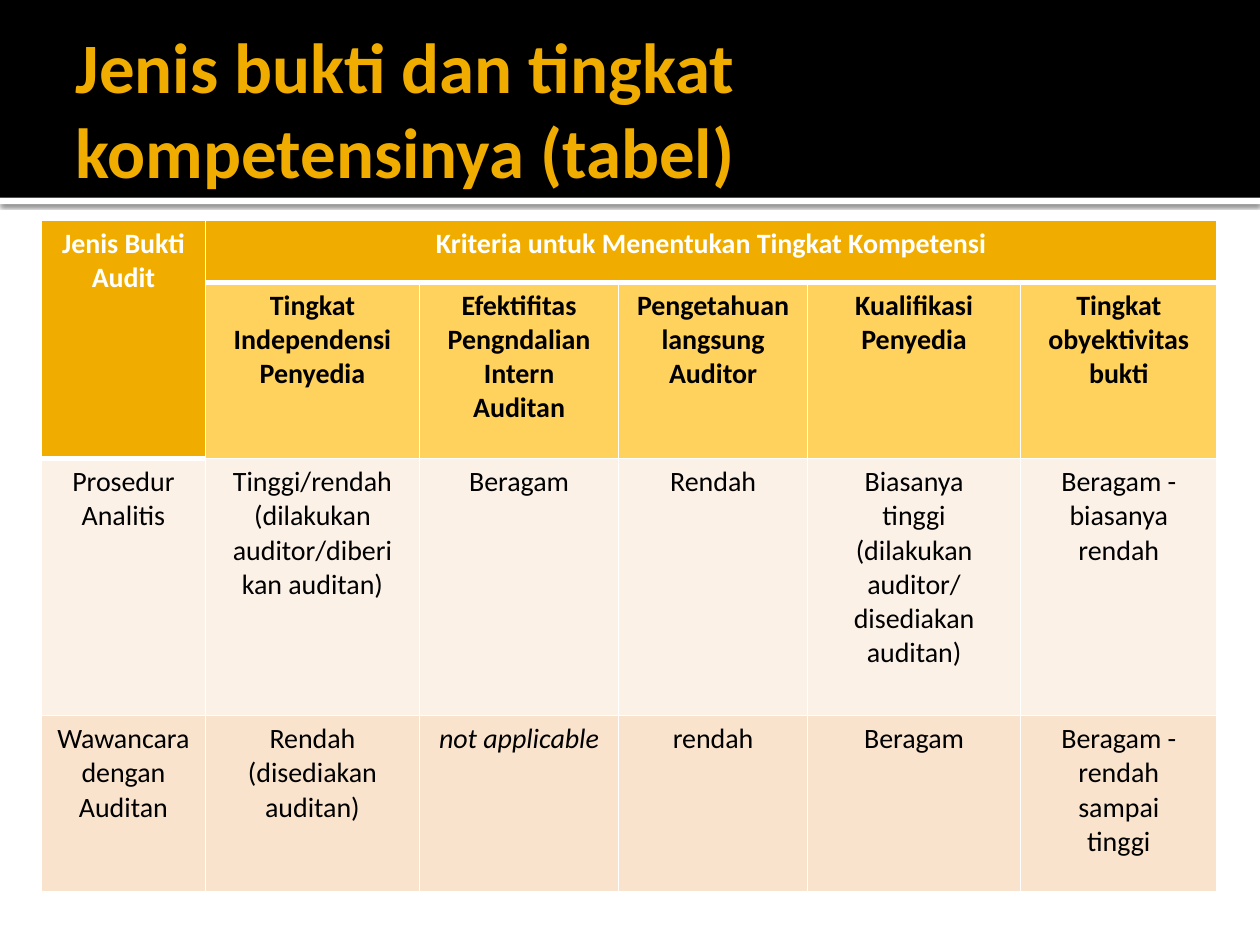
from dataclasses import dataclass

from lxml.etree import SubElement
from pptx import Presentation
from pptx.dml.color import RGBColor
from pptx.enum.text import MSO_ANCHOR as ANCHOR, PP_ALIGN as ALIGN
from pptx.enum.shapes import MSO_SHAPE as SHAPE
from pptx.oxml import parse_xml
from pptx.oxml.ns import nsdecls, qn
from pptx.util import Inches, Pt


@dataclass(frozen=True)
class Theme:
    font: str = "Calibri"
    title_size: float = 40.5
    cell_size: float = 16
    black: str = "000000"
    white: str = "FFFFFF"
    gold: str = "F0AD00"
    subhead: str = "FFD25D"
    bands: tuple = ("FCF1E7", "F9E3CC")


THEME = Theme()
COL_WIDTHS = (1.3, 1.7, 1.58, 1.5, 1.69, 1.56)
ROW_HEIGHTS = (0.49, 1.4, 2.04, 1.4)
NOT_APPLICABLE = "not applicable"

# Each line of a cell is a paragraph of its own.
HEADER = ["Jenis Bukti\nAudit", "Kriteria untuk Menentukan Tingkat Kompetensi"]
SUBHEADS = [
    "Tingkat\nIndependensi\nPenyedia",
    "Efektifitas\nPengndalian\nIntern\nAuditan",
    "Pengetahuan\nlangsung\nAuditor",
    "Kualifikasi\nPenyedia",
    "Tingkat\nobyektivitas\nbukti",
]
EVIDENCE = [
    ["Prosedur\nAnalitis",
     "Tinggi/rendah (dilakukan\nauditor/diberi\nkan auditan)",
     "Beragam",
     "Rendah",
     "Biasanya\ntinggi\n(dilakukan\nauditor/ disediakan auditan)",
     "Beragam -\nbiasanya\nrendah"],
    ["Wawancara\ndengan\nAuditan",
     "Rendah\n(disediakan\nauditan)",
     NOT_APPLICABLE,
     "rendah",
     "Beragam",
     "Beragam -\nrendah\nsampai\ntinggi"],
]


def rgb(value):
    return RGBColor.from_string(value)


def style_run(r, size, color, bold, italic=False):
    r.font.name = THEME.font
    r.font.size = Pt(size)
    r.font.color.rgb = rgb(color)
    r.font.bold = bold
    r.font.italic = italic


def add_bar(slide, left, top, width, height, color):
    sp = slide.shapes.add_shape(SHAPE.RECTANGLE, Inches(left), Inches(top),
                                Inches(width), Inches(height))
    sp.fill.solid()
    sp.fill.fore_color.rgb = rgb(color)
    sp.line.fill.background()
    sp.shadow.inherit = False
    return sp


def add_soft_shadow(sp):
    effects = sp._element.spPr.find(qn("a:effectLst"))
    shadow = SubElement(effects, qn("a:outerShdw"), blurRad=str(Pt(2.5)),
                        dist=str(Pt(0.8)), dir="5400000", algn="t", rotWithShape="0")
    color = SubElement(shadow, qn("a:srgbClr"), val=THEME.black)
    SubElement(color, qn("a:alpha"), val="60000")


def add_title_band(slide, left, top, width, height, text):
    """Black band with a shadowed white strip below and the title on it."""
    add_soft_shadow(add_bar(slide, left, top + height, width, 0.05, THEME.white))
    add_bar(slide, left, top, width, height, THEME.black)

    title = slide.shapes.title
    title.left, title.top = Inches(left + 0.5), Inches(top + 0.17)
    title.width, title.height = Inches(width - 1), Inches(height - 0.2)
    slide.shapes._spTree.append(title._element)  # in front of the band
    tf = title.text_frame
    tf.word_wrap = True
    tf.vertical_anchor = ANCHOR.MIDDLE
    tf.margin_left = Inches(0.1)
    tf.margin_top = tf.margin_right = tf.margin_bottom = Inches(0.05)
    p = tf.paragraphs[0]
    p.alignment = ALIGN.LEFT
    r = p.add_run()
    r.text = text
    style_run(r, THEME.title_size, THEME.gold, True)


def set_borders(cell, **widths):
    """Give white borders, named lnL, lnR, lnT and lnB, their widths in points."""
    tc_pr = cell._tc.get_or_add_tcPr()
    for i, (side, width) in enumerate(widths.items()):
        tc_pr.insert(i, parse_xml(
            f'<a:{side} {nsdecls("a")} w="{Pt(width)}"><a:solidFill>'
            f'<a:srgbClr val="{THEME.white}"/></a:solidFill></a:{side}>'))


def fill_cell(cell, text, fill, color=THEME.black, bold=False):
    cell.fill.solid()
    cell.fill.fore_color.rgb = rgb(fill)
    tf = cell.text_frame
    for i, line in enumerate(text.split("\n")):
        p = tf.add_paragraph() if i else tf.paragraphs[0]
        p.alignment = ALIGN.CENTER
        r = p.add_run()
        r.text = line
        style_run(r, THEME.cell_size, color, bold, line == NOT_APPLICABLE)


def add_evidence_table(slide, left, top, width, height):
    table = slide.shapes.add_table(
        len(ROW_HEIGHTS), len(COL_WIDTHS), Inches(left), Inches(top),
        Inches(width), Inches(height)).table
    for col, share in zip(table.columns, COL_WIDTHS):
        col.width = Inches(width * share / sum(COL_WIDTHS))
    for row, share in zip(table.rows, ROW_HEIGHTS):
        row.height = Inches(height * share / sum(ROW_HEIGHTS))

    table.cell(0, 0).merge(table.cell(1, 0))
    table.cell(0, 1).merge(table.cell(0, len(COL_WIDTHS) - 1))
    for c, text in enumerate(HEADER):
        fill_cell(table.cell(0, c), text, THEME.gold, THEME.white, True)
    for c, text in enumerate(SUBHEADS, 1):
        fill_cell(table.cell(1, c), text, THEME.subhead, bold=True)
    for r, (texts, band) in enumerate(zip(EVIDENCE, THEME.bands), 2):
        for c, text in enumerate(texts):
            fill_cell(table.cell(r, c), text, band)

    for r in range(len(ROW_HEIGHTS)):
        for c in range(len(COL_WIDTHS)):
            under_header = r == 0 or (r, c) == (1, 0)
            sides = {"lnL": 1, "lnR": 1}
            if r == 0:
                sides["lnT"] = 1
            set_borders(table.cell(r, c), **sides, lnB=3 if under_header else 1)


def main():
    prs = Presentation()
    prs.slide_width, prs.slide_height = Inches(10), Inches(7.5)
    slide = prs.slides.add_slide(prs.slide_layouts[5])
    add_title_band(slide, 0, 0, 10, 1.57,
                   "Jenis bukti dan tingkat kompetensinya (tabel)")
    add_evidence_table(slide, 0.33, 1.75, 9.33, 5.33)
    prs.save("out.pptx")


if __name__ == "__main__":
    main()
